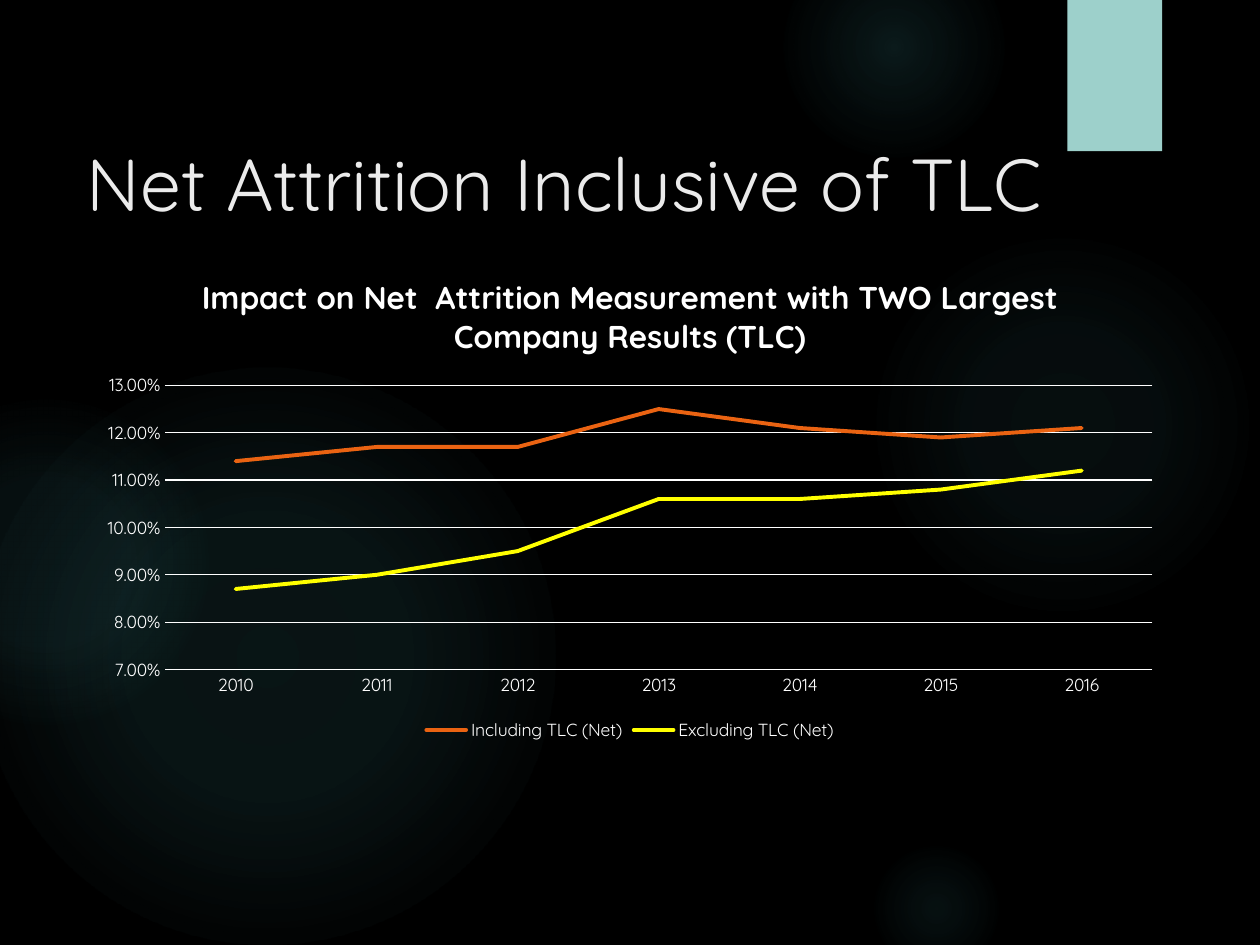
import pptx
import pptx.chart.data
import pptx.dml.color
import pptx.enum.chart
import pptx.enum.shapes
import pptx.enum.text
import pptx.oxml
import pptx.oxml.ns
import pptx.util
from pptx.util import Cm

FONT = "Quicksand"
COLORS = {"bg": "000000", "glow": "50B9C1", "tab": "9DD0CB", "title": "EBEBEB",
          "text": "FFFFFF", "including": "EA6312", "excluding": "FFFF00"}
YEARS = ["2010", "2011", "2012", "2013", "2014", "2015", "2016"]
SERIES = {
    "including": ("Including TLC (Net)",
                  [0.114, 0.117, 0.117, 0.125, 0.121, 0.119, 0.121]),
    "excluding": ("Excluding TLC (Net)",
                  [0.087, 0.09, 0.095, 0.106, 0.106, 0.108, 0.112]),
}
GLOWS = [
    (17.5, 4.65, 7.82, [(0, 7), (36, 6), (69, 0)]),
    (15.8, -1.27, 4.45, [(0, 14), (36, 7), (73, 0)]),
    (17.5, 16.94, 2.74, [(0, 9), (36, 5), (66, 0)]),
    (-0.43, 7.42, 11.63, [(0, 11), (36, 10), (75, 0)]),
    (-2.34, 8.05, 6.55, [(0, 8), (36, 8), (72, 0)]),
]


def rgb(name):
    """Return a named colour."""
    return pptx.dml.color.RGBColor.from_string(COLORS[name])


def format_font(font, size=10, color="text", bold=False):
    """Set the typeface, size, colour and weight of a font."""
    font.name = FONT
    font.size = pptx.util.Pt(size)
    font.bold = bold
    font.color.rgb = rgb(color)


def add_text(tf, text, **kwargs):
    """Write one formatted run into a text frame."""
    r = tf.paragraphs[0].add_run()
    r.text = text
    format_font(r.font, **kwargs)


def format_line(line, color, width):
    """Set the colour and width of a line."""
    line.color.rgb = rgb(color)
    line.width = pptx.util.Pt(width)


def add_plain_shape(s, kind, left, top, width, height):
    """Add a shape without line or shadow."""
    sp = s.shapes.add_shape(kind, Cm(left), Cm(top), Cm(width), Cm(height))
    sp.shadow.inherit = False
    sp.line.fill.background()
    return sp


def add_glow(s, left, top, size, stops):
    """Add a circle whose colour fades out from its centre."""
    sp = add_plain_shape(s, pptx.enum.shapes.MSO_SHAPE.OVAL, left, top, size, size)
    stop_xml = "".join(
        f'<a:gs pos="{pos * 1000}"><a:srgbClr val="{COLORS["glow"]}">'
        f'<a:alpha val="{alpha * 1000}"/></a:srgbClr></a:gs>' for pos, alpha in stops)
    grad = pptx.oxml.parse_xml(
        f'<a:gradFill {pptx.oxml.ns.nsdecls("a")} rotWithShape="1">'
        f'<a:gsLst>{stop_xml}</a:gsLst><a:path path="circle">'
        '<a:fillToRect l="50000" t="50000" r="50000" b="50000"/></a:path></a:gradFill>')
    sp._element.spPr.find(pptx.oxml.ns.qn("a:prstGeom")).addnext(grad)


def add_backdrop(s):
    """Fill the background and add the glows and the corner tab."""
    s.background.fill.solid()
    s.background.fill.fore_color.rgb = rgb("bg")
    for glow in GLOWS:
        add_glow(s, *glow)
    tab = add_plain_shape(s, pptx.enum.shapes.MSO_SHAPE.RECTANGLE, 21.52, 0, 1.91, 3.05)
    tab.fill.solid()
    tab.fill.fore_color.rgb = rgb("tab")


def add_title(s, left, top, width, height):
    """Add the slide title."""
    tf = s.shapes.add_textbox(Cm(left), Cm(top), Cm(width), Cm(height)).text_frame
    tf.word_wrap = True
    tf.vertical_anchor = pptx.enum.text.MSO_ANCHOR.TOP
    add_text(tf, "Net Attrition Inclusive of TLC", size=42, color="title")


def format_axes(chart):
    """Format the year axis and the percentage axis."""
    none = pptx.enum.chart.XL_TICK_MARK.NONE
    for axis in (chart.category_axis, chart.value_axis):
        axis.major_tick_mark = axis.minor_tick_mark = none
        format_font(axis.tick_labels.font)
    format_line(chart.category_axis.format.line, "text", 0.75)
    axis = chart.value_axis
    axis.minimum_scale, axis.maximum_scale, axis.major_unit = 0.07, 0.13, 0.01
    axis.tick_labels.number_format = "0.00%"
    axis.tick_labels.number_format_is_linked = False
    axis.format.line.fill.background()
    axis.has_major_gridlines = True
    format_line(axis.major_gridlines.format.line, "text", 0.75)


def set_plot_layout(chart, x, y, w, h):
    """Fix the inner plot area as fractions of the chart."""
    plot_area = chart._chartSpace.chart.plotArea
    for old in plot_area.findall(pptx.oxml.ns.qn("c:layout")):
        plot_area.remove(old)
    sizes = "".join(f'<c:{k} val="{v}"/>' for k, v in zip("xywh", (x, y, w, h)))
    plot_area.insert(0, pptx.oxml.parse_xml(
        f'<c:layout {pptx.oxml.ns.nsdecls("c")}><c:manualLayout>'
        '<c:layoutTarget val="inner"/><c:xMode val="edge"/><c:yMode val="edge"/>'
        f'{sizes}</c:manualLayout></c:layout>'))


def add_attrition_chart(s, left, top, width, height):
    """Add the line chart of net attrition by year."""
    data = pptx.chart.data.CategoryChartData(number_format="0.00%")
    data.categories = YEARS
    for name, values in SERIES.values():
        data.add_series(name, values)
    chart = s.shapes.add_chart(pptx.enum.chart.XL_CHART_TYPE.LINE, Cm(left), Cm(top),
                               Cm(width), Cm(height), data).chart
    format_font(chart.font)
    chart.has_title = True
    add_text(chart.chart_title.text_frame,
             "Impact on Net  Attrition Measurement with TWO Largest "
             "Company Results (TLC)", size=18, bold=True)
    chart.chart_title.include_in_layout = False
    chart.has_legend = True
    chart.legend.position = pptx.enum.chart.XL_LEGEND_POSITION.BOTTOM
    chart.legend.include_in_layout = False
    format_font(chart.legend.font)
    format_axes(chart)
    set_plot_layout(chart, 1.58 / width, 2.7 / height, 19.9 / width, 5.73 / height)
    chart.plots[0].vary_by_categories = False
    for color, series in zip(SERIES, chart.plots[0].series):
        series.smooth = False
        series.marker.style = pptx.enum.chart.XL_MARKER_STYLE.NONE
        format_line(series.format.line, color, 2.25)
        series.format.line._ln.set("cap", "rnd")


def main():
    """Build and save the slide."""
    prs = pptx.Presentation()
    prs.slide_width, prs.slide_height = Cm(25.4), Cm(19.05)
    s = prs.slides.add_slide(prs.slide_layouts[6])
    add_backdrop(s)
    add_title(s, 1.5, 2.65, 21.9, 2.77)
    add_attrition_chart(s, 1.75, 5.07, 21.9, 9.96)
    prs.save("out.pptx")


if __name__ == "__main__":
    main()
